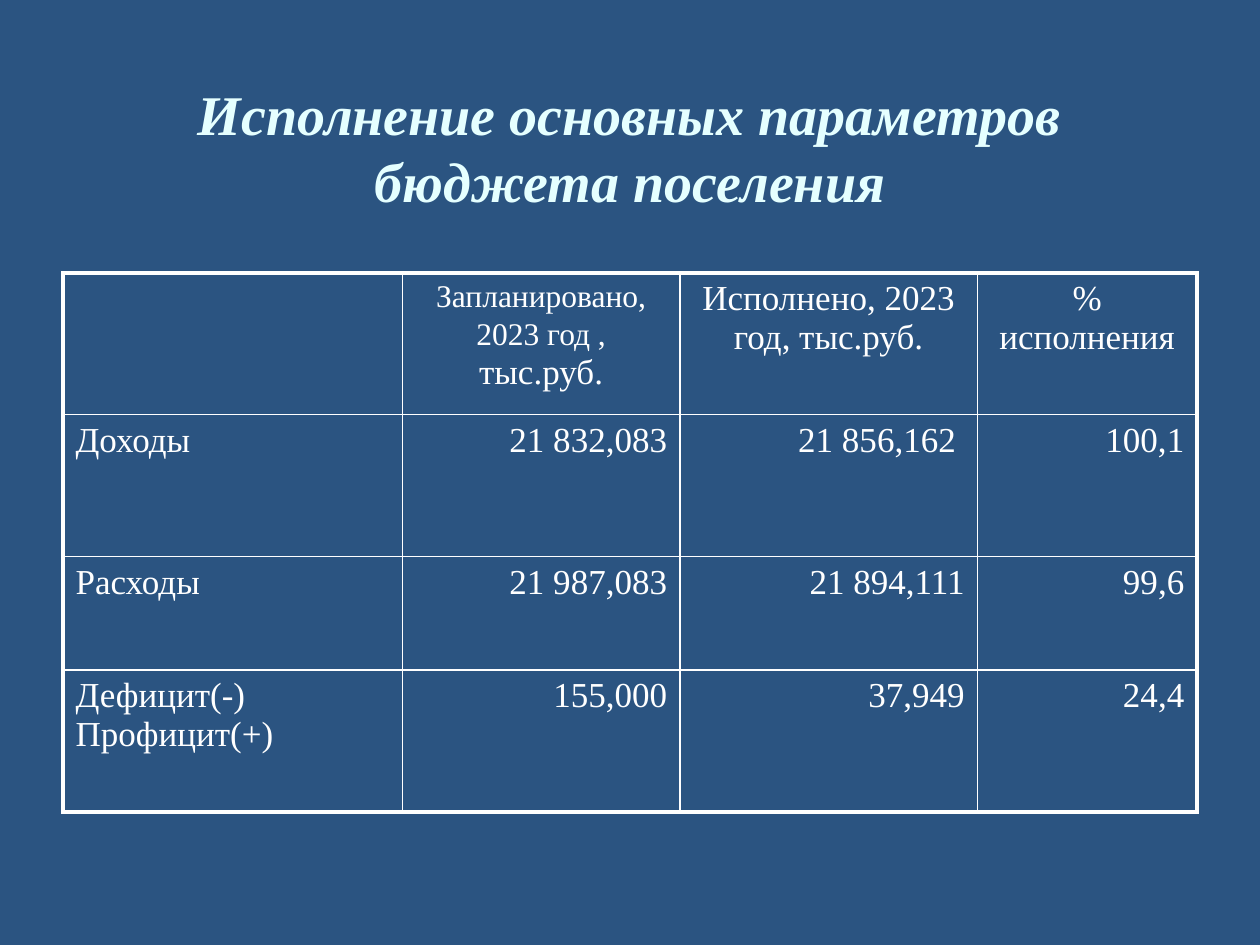
from lxml import etree
from pptx import Presentation
from pptx.dml.color import RGBColor
from pptx.enum.text import MSO_ANCHOR, MSO_AUTO_SIZE, PP_ALIGN
from pptx.oxml.ns import qn
from pptx.util import Pt

LEFT, MID, RIGHT = PP_ALIGN.LEFT, PP_ALIGN.CENTER, PP_ALIGN.RIGHT
NAVY = RGBColor(0x2B, 0x54, 0x81)
WHITE = RGBColor(0xFF, 0xFF, 0xFF)
ICE = RGBColor(0xE5, 0xFF, 0xFF)
FACE = "Times New Roman"
THIN, THICK = 1, 2.25

COLS = [194, 158.5, 170, 125.5]
ROWS = [81, 81, 65, 81]
# A cell is a list of (text, size) runs or a plain string
DATA = [
    ["", [("Запланировано, 2023 год ,", 18), (" тыс.руб.", 20)],
     "Исполнено, 2023 год, тыс.руб.", "% исполнения"],
    ["Доходы", "21 832,083", "21 856,162 ", "100,1"],
    ["Расходы", "21 987,083", "21 894,111", "99,6"],
    ["Дефицит(-) Профицит(+)", "155,000", "37,949", "24,4"],
]


def style(font, size, color):
    font.name = FACE
    font.size = Pt(size)
    font.color.rgb = color


def add_title(slide, text):
    title = slide.shapes.title
    title.left, title.top = Pt(36), Pt(30)
    title.width, title.height = Pt(648), Pt(108)
    frame = title.text_frame
    frame.text = text
    frame.word_wrap = True
    frame.auto_size = MSO_AUTO_SIZE.NONE
    frame.vertical_anchor = MSO_ANCHOR.MIDDLE
    para = frame.paragraphs[0]
    para.alignment = MID
    style(para.font, 32, ICE)
    para.font.bold = para.font.italic = True


def set_edges(cell, widths):
    """Draw the left, right, top and bottom borders of a cell."""
    props = cell._tc.get_or_add_tcPr()
    for i, (side, width) in enumerate(zip("LRTB", widths)):
        line = etree.Element(qn("a:ln" + side), w=str(Pt(width)))
        fill = etree.SubElement(line, qn("a:solidFill"))
        etree.SubElement(fill, qn("a:srgbClr"), val=str(WHITE))
        props.insert(i, line)


def fill_cell(cell, item, align):
    cell.fill.background()
    para = cell.text_frame.paragraphs[0]
    para.alignment = align
    style(para.font, 20, WHITE)
    runs = [(item, 20)] if isinstance(item, str) else item
    for text, size in runs:
        if text:
            run = para.add_run()
            run.text = text
            style(run.font, size, WHITE)


def add_grid(slide):
    last_row, last_col = len(ROWS) - 1, len(COLS) - 1
    table = slide.shapes.add_table(
        len(ROWS), len(COLS), Pt(36), Pt(156),
        Pt(sum(COLS)), Pt(sum(ROWS))).table
    table.first_row = table.horz_banding = False
    for col, width in zip(table.columns, COLS):
        col.width = Pt(width)
    for row, height in zip(table.rows, ROWS):
        row.height = Pt(height)
    for r, items in enumerate(DATA):
        for c, item in enumerate(items):
            cell = table.cell(r, c)
            align = MID if r == 0 else LEFT if c == 0 else RIGHT
            fill_cell(cell, item, align)
            # The outer frame is thick, the inner lines are thin
            outer = (c == 0, c == last_col, r == 0, r == last_row)
            set_edges(cell, [THICK if edge else THIN for edge in outer])


def main():
    deck = Presentation()
    deck.slide_width, deck.slide_height = Pt(720), Pt(540)
    slide = deck.slides.add_slide(deck.slide_layouts[5])
    # Background
    slide.background.fill.solid()
    slide.background.fill.fore_color.rgb = NAVY
    # Heading and budget table
    add_title(slide, "Исполнение основных параметров бюджета поселения")
    add_grid(slide)
    deck.save("out.pptx")


if __name__ == "__main__":
    main()
